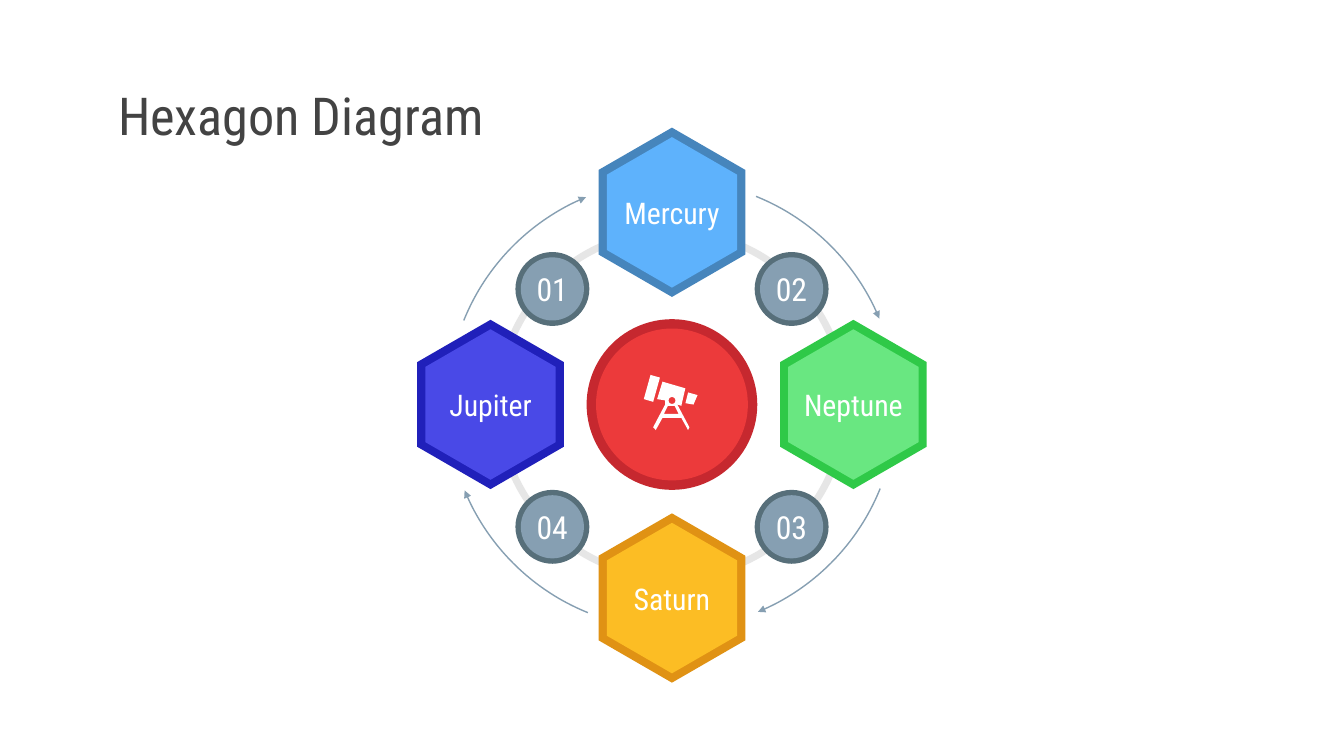
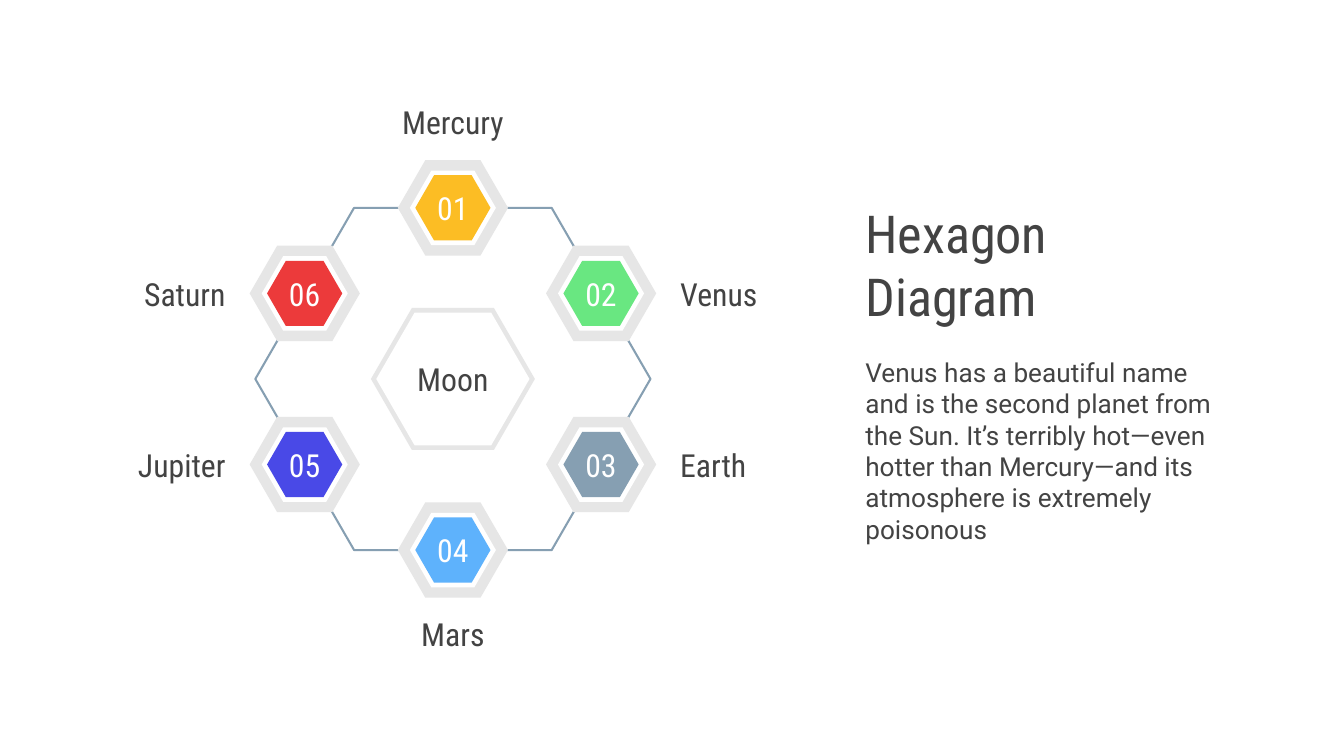
from dataclasses import dataclass
from math import cos, radians, sin

from lxml.etree import SubElement
from pptx import Presentation
from pptx.dml.color import RGBColor
from pptx.enum.shapes import MSO_SHAPE as Preset
from pptx.enum.text import MSO_ANCHOR as Anchor, PP_ALIGN as Align
from pptx.oxml.ns import qn
from pptx.util import Inches, Pt


@dataclass(frozen=True)
class Theme:
    heading_font: str = "Roboto Condensed"
    body_font: str = "Roboto"
    title_size: int = 28
    label_size: int = 17
    planet_size: int = 16
    body_size: int = 14
    ink: str = "434343"
    white: str = "FFFFFF"
    pale: str = "E6E6E6"
    slate: str = "869FB2"
    slate_dark: str = "576F7A"
    blue: str = "5EB2FC"
    blue_dark: str = "4685BC"
    green: str = "69E781"
    green_dark: str = "2FC948"
    yellow: str = "FCBD24"
    yellow_dark: str = "E09214"
    indigo: str = "4949E7"
    indigo_dark: str = "2020BA"
    red: str = "EC3A3B"
    red_dark: str = "C6282F"


THEME = Theme()
SLIDE_WIDTH = Inches(10)
SLIDE_HEIGHT = SLIDE_WIDTH * 9 // 16
TITLE = "Hexagon Diagram"
INSET = 0.1

CYCLE_CENTER = (5, 3.01)
CYCLE_PLANETS = [
    ("Jupiter", -1.35, 0, THEME.indigo_dark, THEME.indigo),
    ("Neptune", 1.35, 0, THEME.green_dark, THEME.green),
    ("Mercury", 0, -1.43, THEME.blue_dark, THEME.blue),
    ("Saturn", 0, 1.44, THEME.yellow_dark, THEME.yellow),
]
CYCLE_STEPS = [("01", 4.11, 2.15), ("03", 5.89, 3.92), ("02", 5.89, 2.15), ("04", 4.11, 3.92)]
ARROW_ANGLES = (292, 337.5)
ARROW_DIAMETER = 3.34
RING_DIAMETER = 2.63

TELESCOPE = [
    [[(4.84, 2.79), (4.79, 2.97), (4.86, 2.99), (4.91, 2.81)]],
    [
        [(4.93, 2.84), (4.89, 2.97), (4.95, 2.98), (4.95, 3.01), (4.86, 3.18),
         (4.88, 3.2), (4.93, 3.11), (5.07, 3.11), (5.12, 3.2), (5.13, 3.18),
         (5.04, 3.01), (5.07, 3.02), (5.1, 2.89)],
        [(4.97, 3.02), (5.02, 3.02), (5.05, 3.08), (4.94, 3.08)],
    ],
    [[(5.12, 2.92), (5.1, 3), (5.16, 3.01), (5.19, 2.94)]],
]
TELESCOPE_PIVOT = (5, 2.98)

ORBIT_CENTER = (3.37, 2.82)
ORBIT_RADIUS = 1.47
MOON = "Moon"
ORBIT_PLANETS = [
    ("Mercury", THEME.yellow),
    ("Venus", THEME.green),
    ("Earth", THEME.slate),
    ("Mars", THEME.blue),
    ("Jupiter", THEME.indigo),
    ("Saturn", THEME.red),
]
DESCRIPTION = (
    "Venus has a beautiful name and is the second planet from the Sun. "
    "It’s terribly hot—even hotter than Mercury—and its atmosphere "
    "is extremely poisonous"
)


def polar(center, radius, angle):
    turn = radians(angle)
    return center[0] + radius * cos(turn), center[1] + radius * sin(turn)


def paint(shape, fill=None, line=None, width=0):
    shape.shadow.inherit = False
    if fill:
        shape.fill.solid()
        shape.fill.fore_color.rgb = RGBColor.from_string(fill)
    else:
        shape.fill.background()
    if line:
        shape.line.color.rgb = RGBColor.from_string(line)
        shape.line.width = Pt(width)
    else:
        shape.line.fill.background()
    return shape


def write(shape, text, size, color=THEME.white, align=Align.CENTER,
          anchor=Anchor.MIDDLE, wrap=False, font=THEME.heading_font):
    frame = shape.text_frame
    frame.text = text
    frame.word_wrap = wrap
    frame.vertical_anchor = anchor
    frame.margin_left = frame.margin_right = Inches(INSET)
    frame.margin_top = frame.margin_bottom = Inches(INSET)
    paragraph = frame.paragraphs[0]
    paragraph.alignment = align
    style = paragraph.runs[0].font
    style.name = font
    style.size = Pt(size)
    style.color.rgb = RGBColor.from_string(color)


def add_text(shapes, box, text, size, **style):
    label = shapes.add_textbox(*[Inches(v) for v in box])
    write(label, text, size, color=THEME.ink, wrap=True, **style)


def add_title(slide, box):
    add_text(slide.shapes, box, TITLE, THEME.title_size, align=Align.LEFT)


def outline(shapes, contours):
    builder = None
    for contour in contours:
        first, *rest = [(Inches(x), Inches(y)) for x, y in contour]
        if builder:
            builder.move_to(*first)
        else:
            builder = shapes.build_freeform(*first)
        builder.add_line_segments(rest, close=True)
    return builder.convert_to_shape()


def hexagon(shapes, center, radius, start=0):
    return outline(shapes, [[polar(center, radius, start + 60 * i) for i in range(6)]])


def circle(shapes, center, diameter, preset=Preset.OVAL):
    left, top = (Inches(v - diameter / 2) for v in center)
    return shapes.add_shape(preset, left, top, Inches(diameter), Inches(diameter))


def nested(shapes, draw, center, layers, **options):
    for size, color in layers:
        top = paint(draw(shapes, center, size, **options), color)
    return top


def add_arrow(shapes, rotation):
    arrow = circle(shapes, CYCLE_CENTER, ARROW_DIAMETER, Preset.ARC)
    for i, angle in enumerate(ARROW_ANGLES):
        arrow.adjustments[i] = angle * 0.6
    arrow.rotation = rotation
    paint(arrow, line=THEME.slate, width=0.75)
    SubElement(arrow.line._get_or_add_ln(), qn("a:tailEnd"), type="triangle", w="sm", len="sm")


def build_cycle(slide):
    cx, cy = CYCLE_CENTER
    arrows = slide.shapes.add_group_shape().shapes
    for rotation in (90, 180, 270, 0):
        add_arrow(arrows, rotation)
    add_title(slide, (0.78, 0.59, 3.29, 0.53))

    ring = paint(circle(slide.shapes, CYCLE_CENTER, RING_DIAMETER, Preset.DONUT), THEME.pale)
    ring.adjustments[0] = 0.02

    for number, x, y in CYCLE_STEPS:
        group = slide.shapes.add_group_shape().shapes
        badge = nested(group, circle, (x, y), [(0.55, THEME.slate_dark), (0.47, THEME.slate)])
        write(badge, number, THEME.label_size)

    for planet, dx, dy, rim, face in CYCLE_PLANETS:
        group = slide.shapes.add_group_shape().shapes
        tile = nested(group, hexagon, (cx + dx, cy + dy), [(0.63, rim), (0.56, face)], start=30)
        write(tile, planet, THEME.planet_size)

    hub = slide.shapes.add_group_shape().shapes
    nested(hub, circle, CYCLE_CENTER, [(1.27, THEME.red_dark), (1.13, THEME.red)])
    telescope = slide.shapes.add_group_shape().shapes
    for contours in TELESCOPE:
        paint(outline(telescope, contours), THEME.white)
    paint(circle(telescope, TELESCOPE_PIVOT, 0.05), THEME.red)


def label_box(center, angle):
    x, y = center
    if angle % 180 == 90:
        y += 0.63 * sin(radians(angle)) - 0.01
        width, align = 1.72, Align.CENTER
    else:
        right = cos(radians(angle)) > 0
        x += 0.99 if right else -0.99
        width, align = 1, Align.LEFT if right else Align.RIGHT
    return (x - width / 2, y - 0.18, width, 0.36), align


def build_orbit(slide):
    paint(hexagon(slide.shapes, ORBIT_CENTER, ORBIT_RADIUS), line=THEME.slate, width=1.1)
    hub = slide.shapes.add_group_shape().shapes
    moon = nested(hub, hexagon, ORBIT_CENTER, [(0.61, THEME.pale), (0.57, THEME.white)])
    write(moon, MOON, THEME.label_size, color=THEME.ink)

    for i, (planet, color) in enumerate(ORBIT_PLANETS):
        angle = 60 * i - 90
        center = polar(ORBIT_CENTER, ORBIT_RADIUS * cos(radians(30)), angle)
        group = slide.shapes.add_group_shape().shapes
        layers = [(0.41, THEME.pale), (0.32, THEME.white), (0.28, color)]
        write(nested(group, hexagon, center, layers), f"{i + 1:02}", THEME.label_size)
        box, align = label_box(center, angle)
        add_text(group, box, planet, THEME.label_size, align=align)

    add_title(slide, (6.34, 1.5, 2.72, 0.93))
    add_text(slide.shapes, (6.34, 2.55, 2.88, 1.58), DESCRIPTION, THEME.body_size,
             align=Align.LEFT, anchor=Anchor.TOP, font=THEME.body_font)


def main():
    deck = Presentation()
    deck.slide_width, deck.slide_height = SLIDE_WIDTH, SLIDE_HEIGHT
    for build in (build_cycle, build_orbit):
        build(deck.slides.add_slide(deck.slide_layouts[6]))
    deck.save("out.pptx")


if __name__ == "__main__":
    main()
